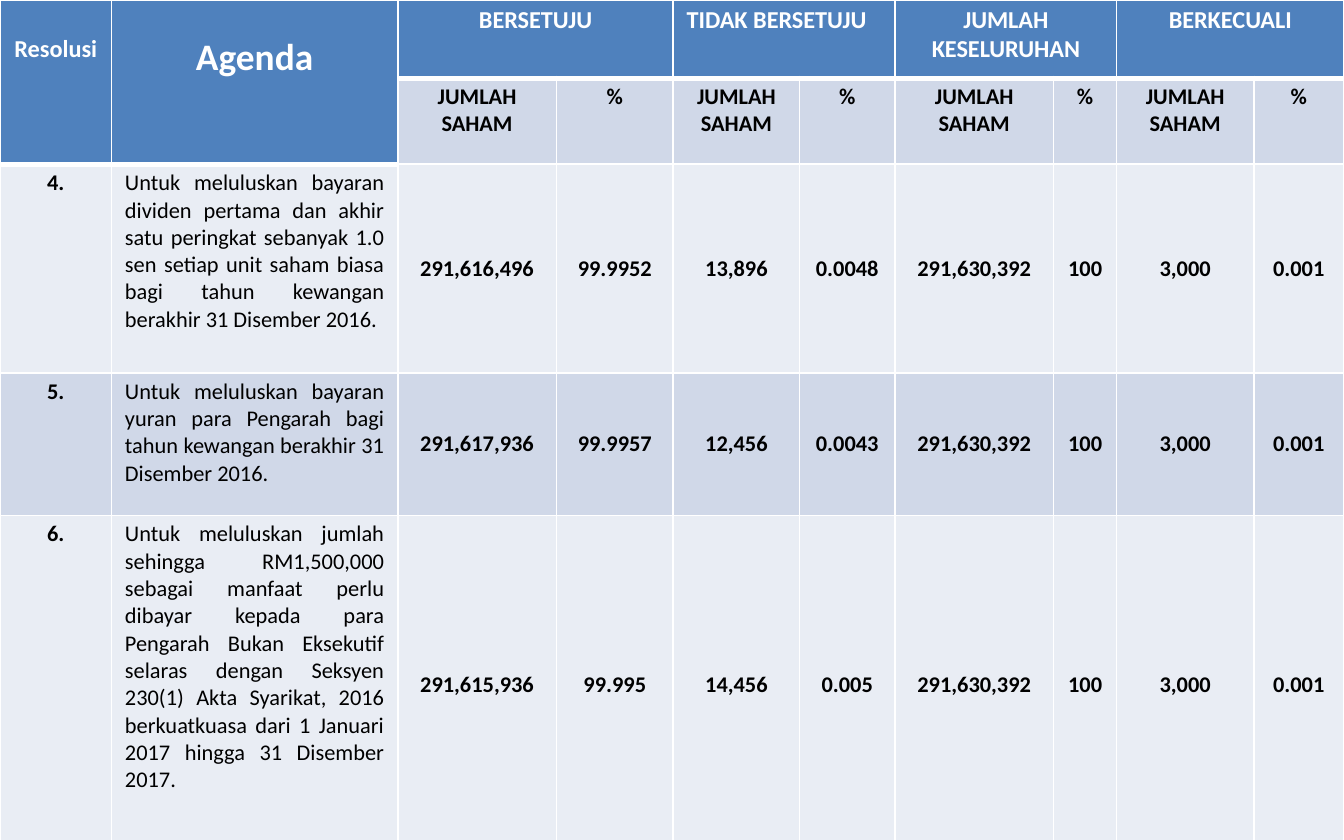
from lxml.etree import SubElement
from pptx import Presentation
from pptx.dml.color import RGBColor
from pptx.enum.text import MSO_ANCHOR, PP_ALIGN
from pptx.oxml.ns import qn
from pptx.util import Inches, Pt

WHITE = RGBColor(0xFF, 0xFF, 0xFF)
BLACK = RGBColor(0x00, 0x00, 0x00)
BLUE = RGBColor(0x4F, 0x81, 0xBD)
BAND_DARK = RGBColor(0xD0, 0xD8, 0xE8)
BAND_LIGHT = RGBColor(0xE9, 0xED, 0xF4)

FONT = "Calibri"
COL_WIDTHS = [0.83, 2.13, 1.18, 0.87, 0.94, 0.71, 1.18, 0.47, 1.02, 0.67]
ROW_HEIGHTS = [0.58, 0.53, 1.55, 1.06, 2.52]
GROUPS = ["BERSETUJU", "TIDAK BERSETUJU", "JUMLAH KESELURUHAN", "BERKECUALI"]
RESOLUTIONS = [
    ("4.", "Untuk meluluskan bayaran dividen pertama dan akhir satu peringkat "
     "sebanyak 1.0 sen setiap unit saham biasa bagi tahun kewangan berakhir "
     "31 Disember 2016.",
     "291,616,496", "99.9952", "13,896", "0.0048", "291,630,392", "100", "3,000", "0.001"),
    ("5.", "Untuk meluluskan bayaran yuran para Pengarah bagi tahun kewangan "
     "berakhir 31 Disember 2016.",
     "291,617,936", "99.9957", "12,456", "0.0043", "291,630,392", "100", "3,000", "0.001"),
    ("6.", "Untuk meluluskan jumlah sehingga RM1,500,000 sebagai manfaat perlu "
     "dibayar kepada para Pengarah Bukan Eksekutif selaras dengan Seksyen 230(1) "
     "Akta Syarikat, 2016 berkuatkuasa dari 1 Januari 2017 hingga 31 Disember 2017.",
     "291,615,936", "99.995", "14,456", "0.005", "291,630,392", "100", "3,000", "0.001"),
]


def set_text(cell, text, size=12, color=BLACK, bold=True, align=PP_ALIGN.CENTER,
             anchor=MSO_ANCHOR.TOP, top=0.04):
    cell.margin_left = cell.margin_right = Inches(0.1)
    cell.margin_top, cell.margin_bottom = Inches(top), Inches(0.04)
    cell.vertical_anchor = anchor
    p = cell.text_frame.paragraphs[0]
    p.alignment = align
    r = p.add_run()
    r.text = text
    r.font.name = FONT
    r.font.size = Pt(size)
    r.font.bold = bold
    r.font.color.rgb = color


def paint_cell(cell, fill, bottom=1):
    """Give the cell white borders and a solid fill."""
    tc_pr = cell._tc.get_or_add_tcPr()
    for tag, width in (("a:lnL", 1), ("a:lnR", 1), ("a:lnT", 1), ("a:lnB", bottom)):
        ln = SubElement(tc_pr, qn(tag), w=str(Pt(width)))
        solid = SubElement(ln, qn("a:solidFill"))
        SubElement(solid, qn("a:srgbClr"), val=str(WHITE))
    cell.fill.solid()
    cell.fill.fore_color.rgb = fill


def fill_header(table):
    for col in range(len(COL_WIDTHS)):
        paint_cell(table.cell(0, col), BLUE, bottom=3)
        if col < 2:
            paint_cell(table.cell(1, col), BLUE, bottom=3)
        else:
            paint_cell(table.cell(1, col), BAND_DARK)
            set_text(table.cell(1, col), "%" if col % 2 else "JUMLAH SAHAM")

    for col, (title, size) in enumerate([("Resolusi", 13), ("Agenda", 20)]):
        cell = table.cell(0, col)
        cell.merge(table.cell(1, col))
        set_text(cell, title, size=size, color=WHITE, top=0.26)

    for i, title in enumerate(GROUPS):
        col = 2 + 2 * i
        cell = table.cell(0, col)
        cell.merge(table.cell(0, col + 1))
        align = PP_ALIGN.LEFT if title == "TIDAK BERSETUJU" else PP_ALIGN.CENTER
        set_text(cell, title, size=13, color=WHITE, align=align)


def fill_resolutions(table):
    for i, values in enumerate(RESOLUTIONS):
        for col, text in enumerate(values):
            cell = table.cell(2 + i, col)
            paint_cell(cell, BAND_DARK if i % 2 else BAND_LIGHT)
            if col == 1:
                set_text(cell, text, bold=False, align=PP_ALIGN.JUSTIFY)
            else:
                set_text(cell, text, anchor=MSO_ANCHOR.MIDDLE if col else MSO_ANCHOR.TOP)


def add_vote_table(slide, left, top, width, height):
    frame = slide.shapes.add_table(len(ROW_HEIGHTS), len(COL_WIDTHS),
                                   left, top, width, height)
    table = frame.table
    for column, share in zip(table.columns, COL_WIDTHS):
        column.width = int(width * share / sum(COL_WIDTHS))
    for row, share in zip(table.rows, ROW_HEIGHTS):
        row.height = int(height * share / sum(ROW_HEIGHTS))
    fill_header(table)
    fill_resolutions(table)


def main():
    prs = Presentation()
    prs.slide_width, prs.slide_height = Inches(10), Inches(6.25)
    slide = prs.slides.add_slide(prs.slide_layouts[6])
    add_vote_table(slide, 0, 0, prs.slide_width, prs.slide_height)
    prs.save("out.pptx")


if __name__ == "__main__":
    main()
